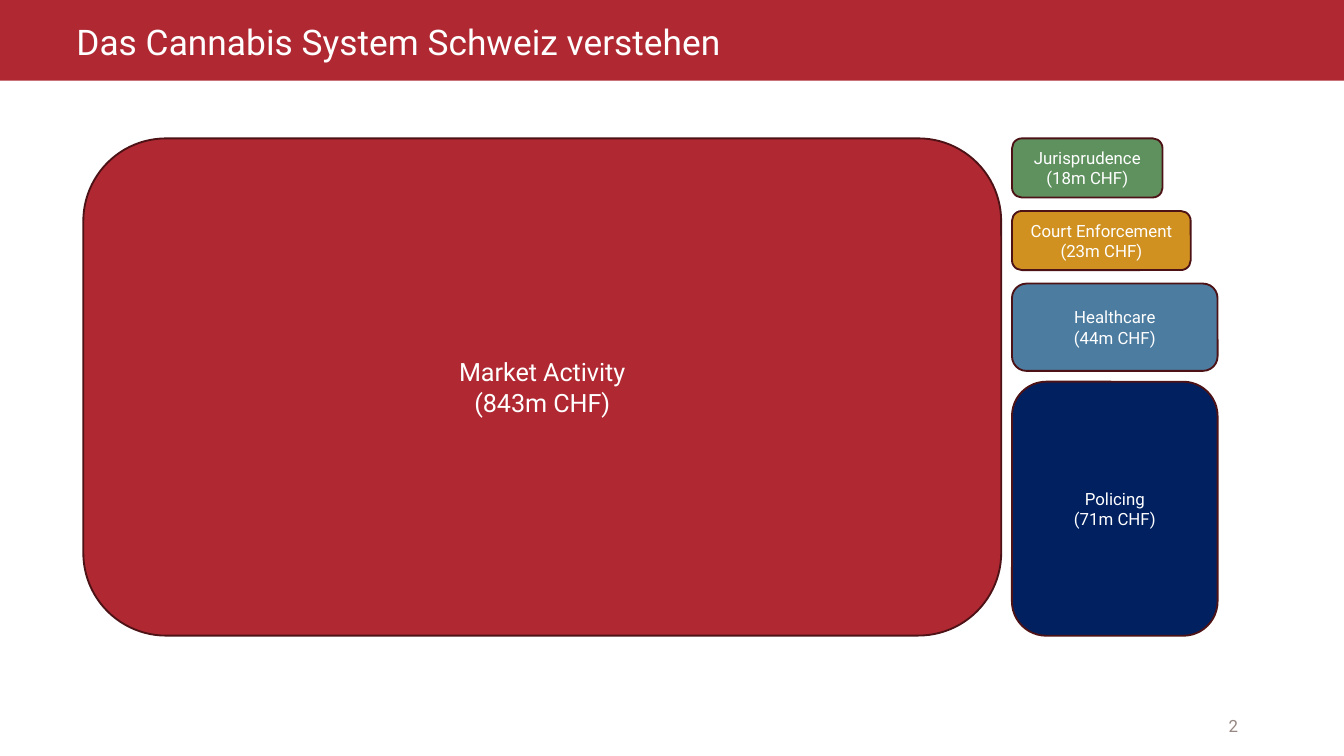
from pptx import Presentation
from pptx import util as u
from pptx.dml import color
from pptx.enum import shapes, text

RED, EDGE, WHITE = "AF2832", "4D1216", "FFFFFF"
LEFT, MID, RIGHT = text.PP_ALIGN.LEFT, text.PP_ALIGN.CENTER, text.PP_ALIGN.RIGHT

# Widescreen page, 16 to 9
deck = Presentation()
deck.slide_width, deck.slide_height = u.Inches(10), u.Inches(10 * 9 / 16)
page = deck.slides.add_slide(deck.slide_layouts[6])


def paint(part, tone):
    part.solid()
    part.fore_color.rgb = color.RGBColor.from_string(tone)


def write(shape, lines, size, tone, align):
    frame = shape.text_frame
    frame.word_wrap = True
    frame.vertical_anchor = text.MSO_ANCHOR.MIDDLE
    frame.text = "\n".join(lines)
    for para in frame.paragraphs:
        para.alignment = align
        para.font.name, para.font.size = "Roboto", u.Pt(size)
        paint(para.font.fill, tone)


# Header band
band = page.shapes.add_shape(shapes.MSO_SHAPE.RECTANGLE, 0, 0, deck.slide_width, u.Inches(0.6))
band.shadow.inherit = False
paint(band.fill, RED)
band.line.fill.background()

# Title and page number
for label, box, size, tone, align in [
    ("Das Cannabis System Schweiz verstehen", (0.47, 0.09, 6.77, 0.43), 18.9, WHITE, LEFT),
    ("2", (7.06, 5.25, 2.25, 0.3), 9, "968782", RIGHT),
]:
    area = page.shapes.add_textbox(*map(u.Inches, box))
    write(area, [label], size, tone, align)

# Cost blocks: a large one, three stacked beside it, the last on its base line
top, tall, side, gap = 1.03, 3.7, 7.53, 0.1
blocks = [("Market Activity", 843, 0.62, top, 6.83, tall, RED, 13.5)]
y = top
for name, cost, wide, high, tone in [
    ("Jurisprudence", 18, 1.12, 0.44, "5F915F"),
    ("Court Enforcement", 23, 1.33, 0.44, "D09120"),
    ("Healthcare", 44, 1.53, 0.65, "4C7CA0"),
    ("Policing", 71, 1.53, 1.89, "002060"),
]:
    y = min(y, top + tall - high)
    blocks.append((name, cost, side, y, wide, high, tone, 9))
    y += high + gap

for name, cost, x, y, wide, high, tone, size in blocks:
    block = page.shapes.add_shape(
        shapes.MSO_SHAPE.ROUNDED_RECTANGLE, *map(u.Inches, (x, y, wide, high)))
    block.shadow.inherit = False
    paint(block.fill, tone)
    paint(block.line.fill, EDGE)
    block.line.width = u.Pt(1)
    write(block, [name, f"({cost}m CHF)"], size, WHITE, MID)

deck.save("out.pptx")
